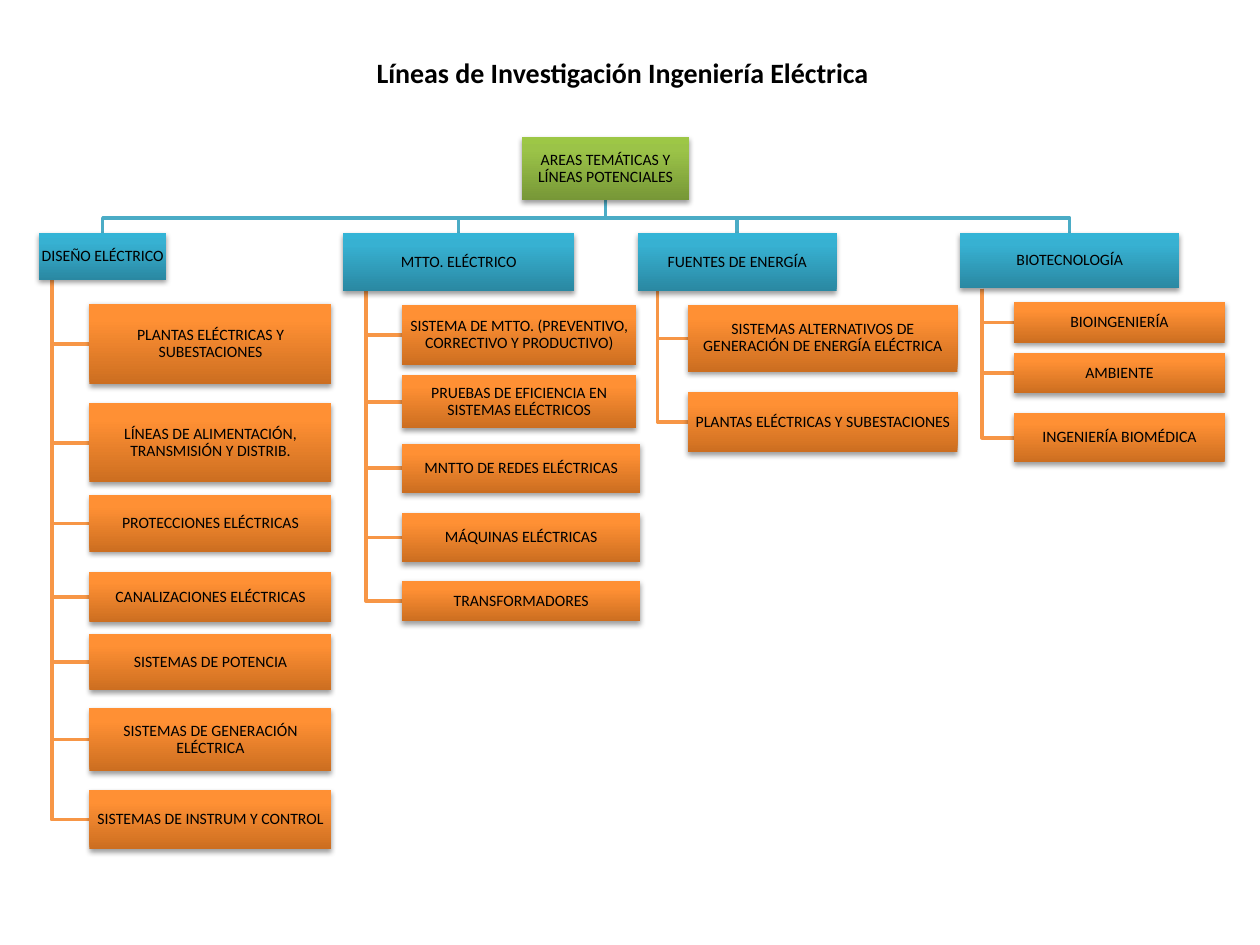
"""Builds the tree of research lines in electrical engineering."""
from copy import deepcopy
from dataclasses import dataclass

from lxml import etree
from pptx import Presentation
from pptx import util as u
from pptx.dml.color import RGBColor
from pptx.enum import shapes, text
from pptx.oxml import ns


@dataclass(frozen=True)
class Theme:
    font: str = "Calibri"
    title_size: int = 16
    box_size: int = 9
    line_width: int = 2
    ink: str = "000000"
    root: tuple[str, ...] = ("779737", "9BC348", "9DC746")
    area: tuple[str, ...] = ("2A88A2", "37B1D2", "34B4D6")
    topic: tuple[str, ...] = ("CC6E20", "FF9034", "FF9136")
    stops: tuple[float, ...] = (0, 0.8, 1)
    area_line: str = "4BACC6"
    topic_line: str = "F79646"


@dataclass(frozen=True)
class Box:
    label: str
    left: float
    top: float
    width: float
    height: float

    @property
    def center(self) -> float:
        return self.left + self.width / 2

    @property
    def middle(self) -> float:
        return self.top + self.height / 2

    @property
    def bottom(self) -> float:
        return self.top + self.height


@dataclass(frozen=True)
class Branch:
    area: Box
    topics: list[Box]


THEME = Theme()
BUS_Y = 1.73
TRUNK_SHARE = 0.1


def column(left: float, *rows: tuple[str, float, float, float]) -> list[Box]:
    return [Box(label, left, top, width, height) for label, top, width, height in rows]


ROOT = Box("AREAS TEMÁTICAS Y LÍNEAS POTENCIALES", 4.14, 1.09, 1.33, 0.5)
BRANCHES = [
    Branch(Box("DISEÑO ELÉCTRICO", 0.31, 1.85, 1.01, 0.37), column(
        0.71,
        ("PLANTAS ELÉCTRICAS Y SUBESTACIONES", 2.41, 1.92, 0.64),
        ("LÍNEAS DE ALIMENTACIÓN, TRANSMISIÓN Y DISTRIB.", 3.2, 1.92, 0.63),
        ("PROTECCIONES ELÉCTRICAS", 3.93, 1.92, 0.45),
        ("CANALIZACIONES ELÉCTRICAS", 4.54, 1.92, 0.4),
        ("SISTEMAS DE POTENCIA", 5.03, 1.92, 0.45),
        ("SISTEMAS DE GENERACIÓN ELÉCTRICA", 5.62, 1.92, 0.5),
        ("SISTEMAS DE INSTRUM Y CONTROL", 6.27, 1.92, 0.47))),
    Branch(Box("MTTO. ELÉCTRICO", 2.72, 1.85, 1.84, 0.46), column(
        3.19,
        ("SISTEMA DE MTTO. (PREVENTIVO, CORRECTIVO Y PRODUCTIVO)", 2.42, 1.86, 0.48),
        ("PRUEBAS DE EFICIENCIA EN SISTEMAS ELÉCTRICOS", 2.98, 1.86, 0.42),
        ("MNTTO DE REDES ELÉCTRICAS", 3.52, 1.89, 0.39),
        ("MÁQUINAS ELÉCTRICAS", 4.07, 1.89, 0.39),
        ("TRANSFORMADORES", 4.61, 1.89, 0.32))),
    Branch(Box("FUENTES DE ENERGÍA", 5.06, 1.85, 1.58, 0.46), column(
        5.46,
        ("SISTEMAS ALTERNATIVOS DE GENERACIÓN DE ENERGÍA ELÉCTRICA", 2.42, 2.14, 0.53),
        ("PLANTAS ELÉCTRICAS Y SUBESTACIONES", 3.11, 2.14, 0.48))),
    Branch(Box("BIOTECNOLOGÍA", 7.62, 1.85, 1.74, 0.44), column(
        8.05,
        ("BIOINGENIERÍA", 2.4, 1.67, 0.32),
        ("AMBIENTE", 2.8, 1.67, 0.32),
        ("INGENIERÍA BIOMÉDICA", 3.28, 1.67, 0.39))),
]


def style_text(p, size: int, bold: bool = False) -> None:
    for r in p.runs:
        r.font.name = THEME.font
        r.font.size = u.Pt(size)
        r.font.bold = bold
        r.font.color.rgb = RGBColor.from_string(THEME.ink)


def add_path(s, points: list[tuple[float, float]], color: str) -> None:
    start, *rest = [(u.Inches(x), u.Inches(y)) for x, y in points]
    builder = s.shapes.build_freeform(*start)
    builder.add_line_segments(rest, close=False)
    sp = builder.convert_to_shape()
    sp.shadow.inherit = False
    sp.fill.background()
    sp.line.color.rgb = RGBColor.from_string(color)
    sp.line.width = u.Pt(THEME.line_width)


def fill_gradient(sp, colors: tuple[str, ...]) -> None:
    sp.fill.gradient()
    sp.fill.gradient_angle = 90
    stop_list = sp._element.spPr.find(".//" + ns.qn("a:gsLst"))
    stop_list.append(deepcopy(stop_list[-1]))
    for stop, color, position in zip(sp.fill.gradient_stops, colors, THEME.stops):
        stop.color.rgb = RGBColor.from_string(color)
        stop.position = position


def add_shadow(sp) -> None:
    sp.shadow.inherit = False
    effects = sp._element.spPr.find(ns.qn("a:effectLst"))
    shadow = etree.SubElement(
        effects, ns.qn("a:outerShdw"), blurRad=str(u.Pt(3.1)), dist=str(u.Pt(1.6)),
        dir="5400000", rotWithShape="0")
    color = etree.SubElement(shadow, ns.qn("a:srgbClr"), val=THEME.ink)
    etree.SubElement(color, ns.qn("a:alpha"), val="38000")


def add_box(s, box: Box, colors: tuple[str, ...]) -> None:
    sp = s.shapes.add_shape(
        shapes.MSO_SHAPE.RECTANGLE, u.Inches(box.left), u.Inches(box.top),
        u.Inches(box.width), u.Inches(box.height))
    fill_gradient(sp, colors)
    sp.line.fill.background()
    add_shadow(sp)
    tf = sp.text_frame
    tf.text = box.label
    tf.word_wrap = True
    tf.vertical_anchor = text.MSO_ANCHOR.MIDDLE
    tf.margin_left = tf.margin_right = tf.margin_top = tf.margin_bottom = u.Inches(0.01)
    p = tf.paragraphs[0]
    p.alignment = text.PP_ALIGN.CENTER
    p.line_spacing = 0.9
    style_text(p, THEME.box_size)


def add_branch_lines(s, branch: Branch) -> None:
    area = branch.area
    add_path(s, [(ROOT.center, ROOT.bottom), (ROOT.center, BUS_Y),
                 (area.center, BUS_Y), (area.center, area.top)], THEME.area_line)
    trunk = area.left + TRUNK_SHARE * area.width
    for topic in branch.topics:
        add_path(s, [(trunk, area.bottom), (trunk, topic.middle),
                     (topic.left, topic.middle)], THEME.topic_line)


def add_title(s, label: str) -> None:
    sp = s.shapes.add_textbox(u.Inches(2.89), u.Inches(0.39), u.Inches(4.15), u.Inches(0.37))
    tf = sp.text_frame
    tf.text = label
    tf.word_wrap = False
    tf.auto_size = text.MSO_AUTO_SIZE.SHAPE_TO_FIT_TEXT
    style_text(tf.paragraphs[0], THEME.title_size, bold=True)


def main() -> None:
    prs = Presentation()
    prs.slide_width, prs.slide_height = u.Inches(10), u.Inches(7.5)
    s = prs.slides.add_slide(prs.slide_layouts[6])
    for branch in BRANCHES:
        add_branch_lines(s, branch)
    add_box(s, ROOT, THEME.root)
    for branch in BRANCHES:
        add_box(s, branch.area, THEME.area)
        for topic in branch.topics:
            add_box(s, topic, THEME.topic)
    add_title(s, "Líneas de Investigación Ingeniería Eléctrica")
    prs.save("out.pptx")


if __name__ == "__main__":
    main()
